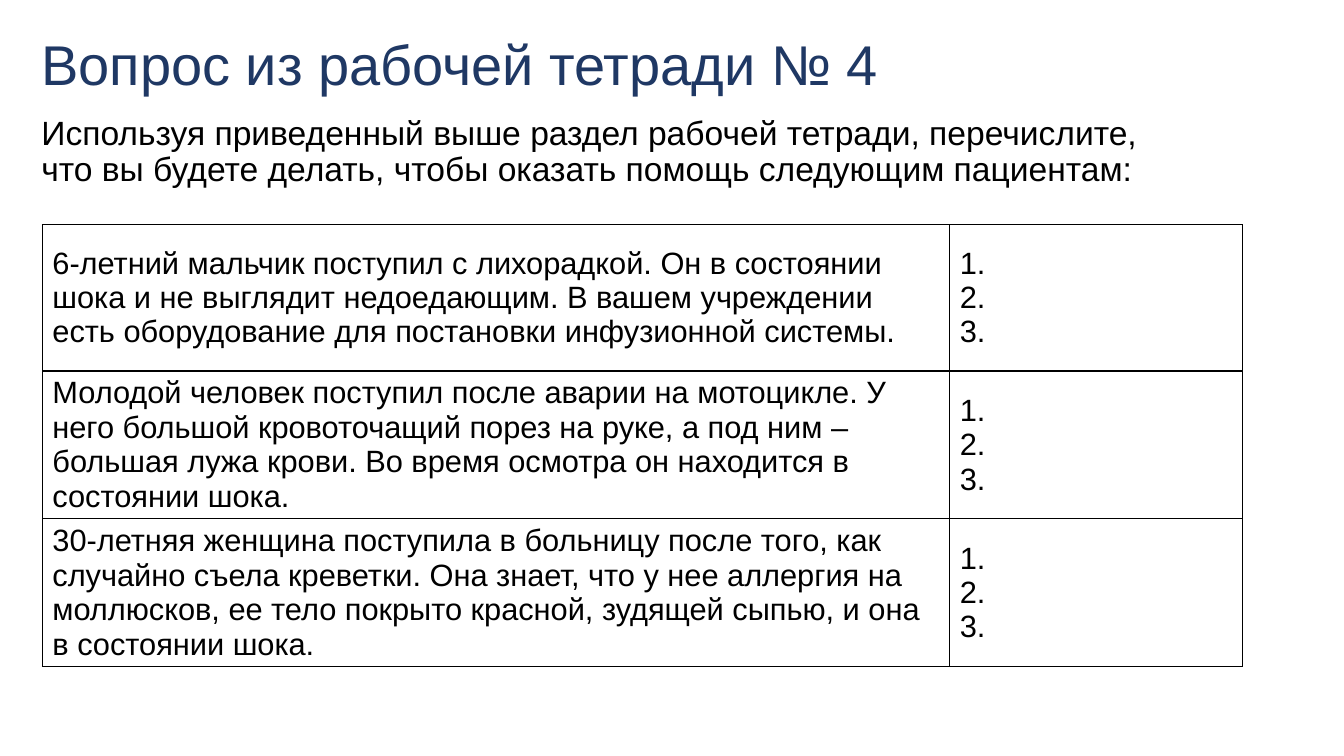
import lxml.etree
import pptx
import pptx.dml.color
import pptx.enum.text
import pptx.oxml.ns
import pptx.util

THEME = {
    "font": "Arial",
    "title": "1F3864", "ink": "000000", "paper": "FFFFFF",
    "title_size": 40, "body_size": 24, "cell_size": 22,
    "border": 1,
}
ANSWERS = ["1.", "2.", "3."]
CASES = [
    "6-летний мальчик поступил с лихорадкой. Он в состоянии шока и не выглядит "
    "недоедающим. В вашем учреждении есть оборудование для постановки инфузионной системы.",
    "Молодой человек поступил после аварии на мотоцикле. У него большой кровоточащий "
    "порез на руке, а под ним – большая лужа крови. Во время осмотра он находится в "
    "состоянии шока.",
    "30-летняя женщина поступила в больницу после того, как случайно съела креветки. "
    "Она знает, что у нее аллергия на моллюсков, ее тело покрыто красной, зудящей "
    "сыпью, и она в состоянии шока.",
]

deck = pptx.Presentation()
deck.slide_width = pptx.util.Inches(13.33)
deck.slide_height = pptx.util.Inches(7.5)
page = deck.slides.add_slide(deck.slide_layouts[1])


def share(left, top, width, height):
    """Turn percentages of the slide's size into lengths."""
    return [int(total * percent / 100) for total, percent in zip(
        (deck.slide_width, deck.slide_height) * 2, (left, top, width, height))]


def write(frame, lines, size, color, spacing=None):
    """Fill a text frame with one left-aligned paragraph per line."""
    frame.word_wrap = True
    for index, line in enumerate(lines):
        para = frame.paragraphs[0] if index == 0 else frame.add_paragraph()
        para.alignment = pptx.enum.text.PP_ALIGN.LEFT
        para.space_before = pptx.util.Pt(0)
        if spacing:
            para.line_spacing = spacing
        span = para.add_run()
        span.text = line
        span.font.name = THEME["font"]
        span.font.size = pptx.util.Pt(size)
        span.font.color.rgb = pptx.dml.color.RGBColor.from_string(color)


# Title and task
title, body = page.placeholders
for box, area, anchor, line, size, color in [
    (title, (2.33, 0.93, 86.27, 16), pptx.enum.text.MSO_ANCHOR.MIDDLE,
     "Вопрос из рабочей тетради № 4", THEME["title_size"], THEME["title"]),
    (body, (2.33, 14.67, 86.27, 67.73), pptx.enum.text.MSO_ANCHOR.TOP,
     "Используя приведенный выше раздел рабочей тетради, перечислите, что вы будете "
     "делать, чтобы оказать помощь следующим пациентам:",
     THEME["body_size"], THEME["ink"]),
]:
    box.left, box.top, box.width, box.height = share(*area)
    box.text_frame.auto_size = pptx.enum.text.MSO_AUTO_SIZE.NONE
    box.text_frame.vertical_anchor = anchor
    properties = box.text_frame.paragraphs[0]._p.get_or_add_pPr()
    properties.set("marL", "0")
    properties.set("indent", "0")
    lxml.etree.SubElement(properties, pptx.oxml.ns.qn("a:buNone"))
    write(box.text_frame, [line], size, color, 0.9)

# Table of patients and answers
table = page.shapes.add_table(len(CASES), 2, *share(3.15, 29.73, 89.27, 58)).table
table.first_row = False
table.horz_banding = False
for column, percent in zip(table.columns, (67.52, 21.75)):
    column.width = int(deck.slide_width * percent / 100)

for row, case in zip(table.rows, CASES):
    for cell, lines in zip(row.cells, ([case], ANSWERS)):
        cell.vertical_anchor = pptx.enum.text.MSO_ANCHOR.MIDDLE
        write(cell.text_frame, lines, THEME["cell_size"], THEME["ink"])
        # Borders come before the fill in the cell's properties
        for side in ("a:lnL", "a:lnR", "a:lnT", "a:lnB"):
            line = lxml.etree.SubElement(
                cell._tc.get_or_add_tcPr(), pptx.oxml.ns.qn(side),
                w=str(pptx.util.Pt(THEME["border"])))
            fill = lxml.etree.SubElement(line, pptx.oxml.ns.qn("a:solidFill"))
            lxml.etree.SubElement(fill, pptx.oxml.ns.qn("a:srgbClr"), val=THEME["ink"])
        cell.fill.solid()
        cell.fill.fore_color.rgb = pptx.dml.color.RGBColor.from_string(THEME["paper"])
        # The fill must follow the four borders
        cell_properties = cell._tc.tcPr
        cell_properties.append(cell_properties.find(pptx.oxml.ns.qn("a:solidFill")))

deck.save("out.pptx")
